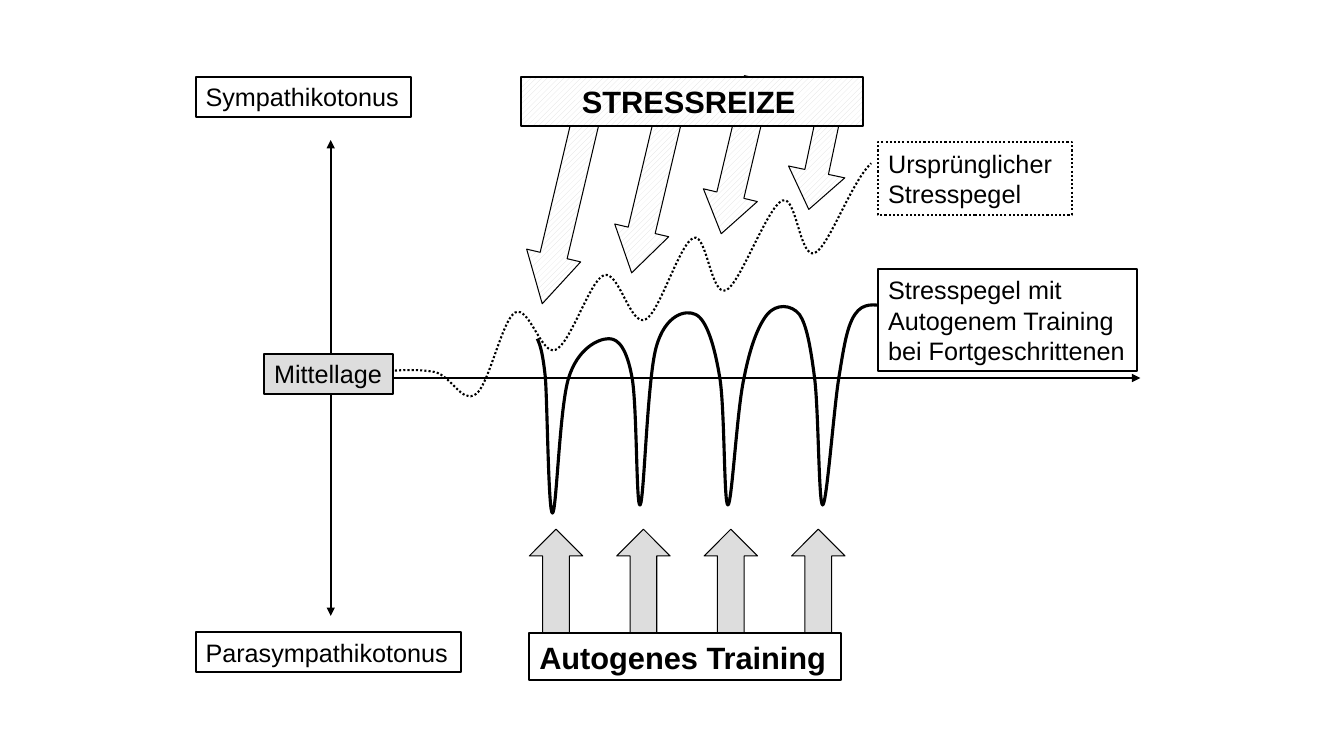
from dataclasses import dataclass
from typing import Any, NamedTuple, Optional

from lxml import etree
from pptx import Presentation
from pptx.dml.color import RGBColor
from pptx.enum.dml import MSO_LINE, MSO_PATTERN
from pptx.enum.shapes import MSO_CONNECTOR, MSO_SHAPE
from pptx.enum.text import MSO_ANCHOR, MSO_AUTO_SIZE, PP_ALIGN
from pptx.oxml.ns import qn
from pptx.util import Inches, Pt

RECT, DOWN, UP = MSO_SHAPE.RECTANGLE, MSO_SHAPE.DOWN_ARROW, MSO_SHAPE.UP_ARROW
STRAIGHT = MSO_CONNECTOR.STRAIGHT
DOTS, HATCH = MSO_LINE.ROUND_DOT, MSO_PATTERN.WIDE_UPWARD_DIAGONAL
LEFT, MIDDLE, GROW = PP_ALIGN.LEFT, MSO_ANCHOR.MIDDLE, MSO_AUTO_SIZE.SHAPE_TO_FIT_TEXT

# Grid: square cells, 13.33 columns by 7.5 rows
COLS, ROWS = 13.33, 7.5


def cell(count: float) -> int:
    return Inches(count)


@dataclass(frozen=True)
class Theme:
    ink: RGBColor = RGBColor(0, 0, 0)
    paper: RGBColor = RGBColor(255, 255, 255)
    grey: RGBColor = RGBColor(0xDD, 0xDD, 0xDD)
    face: str = "Arial"
    label: int = 18
    head: int = 22
    thin: float = 0.75
    rule: float = 1.5
    thick: float = 2.25


THEME = Theme()
FRAME = {"auto_size": GROW, "vertical_anchor": MIDDLE}


class Axis(NamedTuple):
    start: tuple[float, float]
    end: tuple[float, float]
    arrow: bool = True


class Box(NamedTuple):
    text: str
    left: float
    top: float
    width: float
    height: float
    fill: Any = None
    dash: Any = None
    head: bool = False
    pad: Optional[float] = None


class Arrow(NamedTuple):
    left: float
    top: float
    width: float
    height: float
    shaft: float
    tip: float
    tilt: float = 0


# Axes around the middle level
MID = 3.75
AXES = [
    Axis((3.28, 3.91), (3.28, 6.11)),
    Axis((3.91, MID), (10.05, MID), arrow=False),
    Axis((3.28, 3.52), (3.28, 1.39)),
    Axis((10.05, MID), (11.31, MID)),
]

POLES = [
    Box("Sympathikotonus", 1.94, 0.76, 2.14, 0.4),
    Box("Parasympathikotonus", 1.94, 6.27, 2.63, 0.4),
]
STRESS = Box("STRESSREIZE", 5.17, 0.76, 3.39, 0.49, HATCH, head=True, pad=0.6)
NOTES = [
    Box("Autogenes Training", 5.25, 6.28, 3.09, 0.47, THEME.paper, head=True),
    Box("Mittellage", 2.62, 3.51, 1.28, 0.4, THEME.grey),
    Box("Ursprünglicher\nStresspegel", 8.71, 1.41, 1.92, 0.72, dash=DOTS),
    Box("Stresspegel mit\nAutogenem Training\nbei Fortgeschrittenen",
        8.71, 2.67, 2.57, 1.01, THEME.paper),
]

STIMULI = [
    Arrow(5.33, 1.07, 0.55, 1.97, 0.5, 0.894, 13.3),
    Arrow(6.19, 0.99, 0.55, 1.74, 0.5, 0.787, 13.3),
    Arrow(7.06, 0.76, 0.55, 1.58, 0.5, 0.715, 13.3),
    Arrow(7.85, 0.99, 0.57, 1.1, 0.419, 0.666, 11.9),
]
RELIEF = [Arrow(5.25 + 0.867 * i, 5.25, 0.53, 1.07, 0.5, 0.502) for i in range(4)]

# Bezier curves: a start point, then three points for each arc
RISING = [
    (3.75, 3.69),
    (3.95, 3.67), (4.15, 3.66), (4.31, 3.69), (4.48, 3.73), (4.58, 4.01), (4.72, 3.91),
    (4.85, 3.82), (4.98, 3.17), (5.11, 3.1), (5.25, 3.03), (5.37, 3.53), (5.51, 3.47),
    (5.66, 3.41), (5.85, 2.78), (5.99, 2.73), (6.14, 2.68), (6.25, 3.24), (6.4, 3.17),
    (6.54, 3.11), (6.74, 2.41), (6.88, 2.36), (7.01, 2.31), (7.05, 2.94), (7.2, 2.88),
    (7.34, 2.82), (7.61, 2.05), (7.76, 1.99), (7.9, 1.93), (7.93, 2.57), (8.08, 2.51),
    (8.22, 2.45), (8.44, 1.81), (8.64, 1.62),
]
TRAINED = [
    (5.33, 3.36),
    (5.35, 3.41), (5.38, 3.46), (5.41, MID), (5.43, 4.04), (5.44, 5.09), (5.48, 5.09),
    (5.52, 5.09), (5.55, 4.04), (5.64, MID), (5.73, 3.46), (5.93, 3.36), (6.04, 3.36),
    (6.14, 3.36), (6.22, 3.47), (6.27, MID), (6.32, 4.03), (6.31, 5.06), (6.35, 5.01),
    (6.39, 4.96), (6.42, MID), (6.51, 3.44), (6.6, 3.12), (6.8, 3.07), (6.9, 3.12),
    (7.01, 3.17), (7.09, 3.44), (7.14, MID), (7.19, 4.06), (7.18, 5.01), (7.22, 5.01),
    (7.26, 5.01), (7.31, 4.06), (7.38, MID), (7.44, 3.44), (7.52, 3.23), (7.61, 3.12),
    (7.7, 3.01), (7.85, 3.02), (7.93, 3.12), (8, 3.22), (8.04, 3.44), (8.08, MID),
    (8.12, 4.06), (8.12, 5.01), (8.16, 5.01), (8.2, 5.01), (8.27, 4.06), (8.32, MID),
    (8.37, 3.44), (8.4, 3.24), (8.48, 3.12), (8.56, 3), (8.67, 3.02), (8.79, 3.04),
]


def ink(line: Any, width: float, dash: Any = None) -> None:
    line.color.rgb = THEME.ink
    line.width = Pt(width)
    if dash is not None:
        line.dash_style = dash


def paint(shape: Any, fill: Any) -> None:
    shape.shadow.inherit = False
    if fill is None:
        shape.fill.background()
    elif fill == HATCH:
        shape.fill.patterned()
        shape.fill.pattern = HATCH
        shape.fill.fore_color.rgb = THEME.grey
        shape.fill.back_color.rgb = THEME.paper
    else:
        shape.fill.solid()
        shape.fill.fore_color.rgb = fill


def draw_axis(shapes: Any, axis: Axis) -> None:
    line = shapes.add_connector(STRAIGHT, *map(cell, axis.start + axis.end))
    ink(line.line, THEME.rule)
    props = line._element.spPr
    if axis.arrow:
        etree.SubElement(props.find(qn("a:ln")), qn("a:tailEnd"), type="triangle")
    etree.SubElement(props, qn("a:effectLst"))


def draw_box(shapes: Any, box: Box) -> None:
    shape = shapes.add_shape(RECT, *map(cell, box[1:5]))
    paint(shape, box.fill)
    ink(shape.line, THEME.rule, box.dash)
    frame = shape.text_frame
    frame.text = box.text
    frame.word_wrap = box.pad is not None
    for name, value in FRAME.items():
        setattr(frame, name, value)
    if box.pad is not None:
        frame.margin_left = cell(box.pad)
    size = THEME.head if box.head else THEME.label
    style = {"name": THEME.face, "size": Pt(size), "bold": box.head}
    for para in frame.paragraphs:
        para.alignment = LEFT
        for run in para.runs:
            run.font.color.rgb = THEME.ink
            for name, value in style.items():
                setattr(run.font, name, value)


def draw_arrow(shapes: Any, kind: Any, arrow: Arrow, fill: Any) -> None:
    shape = shapes.add_shape(kind, *map(cell, arrow[:4]))
    shape.adjustments[0], shape.adjustments[1] = arrow.shaft, arrow.tip
    shape.rotation = arrow.tilt
    paint(shape, fill)
    ink(shape.line, THEME.thin)


def draw_curve(shapes: Any, points: list, width: float, dash: Any = None) -> None:
    first, *rest = [(cell(x), cell(y)) for x, y in points]
    pen = shapes.build_freeform(*first)
    pen.add_line_segments(rest, close=False)
    shape = pen.convert_to_shape()
    # Join each three line steps into one Bezier arc
    steps = list(shape._element.iter(qn("a:lnTo")))
    for i in range(0, len(steps), 3):
        arc = etree.Element(qn("a:cubicBezTo"))
        steps[i].addprevious(arc)
        for step in steps[i:i + 3]:
            arc.append(step[0])
            step.getparent().remove(step)
    paint(shape, None)
    ink(shape.line, width, dash)


def main() -> None:
    deck = Presentation()
    deck.slide_width, deck.slide_height = cell(COLS), cell(ROWS)
    shapes = deck.slides.add_slide(deck.slide_layouts[6]).shapes

    # Axes and poles
    for axis in AXES:
        draw_axis(shapes, axis)
    for box in POLES:
        draw_box(shapes, box)

    # Stress stimuli above, training below
    draw_curve(shapes, RISING, THEME.rule, DOTS)
    for arrow in STIMULI:
        draw_arrow(shapes, DOWN, arrow, HATCH)
    draw_box(shapes, STRESS)
    draw_curve(shapes, TRAINED, THEME.thick)
    for arrow in RELIEF:
        draw_arrow(shapes, UP, arrow, THEME.grey)

    # Labels on top
    for box in NOTES:
        draw_box(shapes, box)
    deck.save("out.pptx")


if __name__ == "__main__":
    main()
